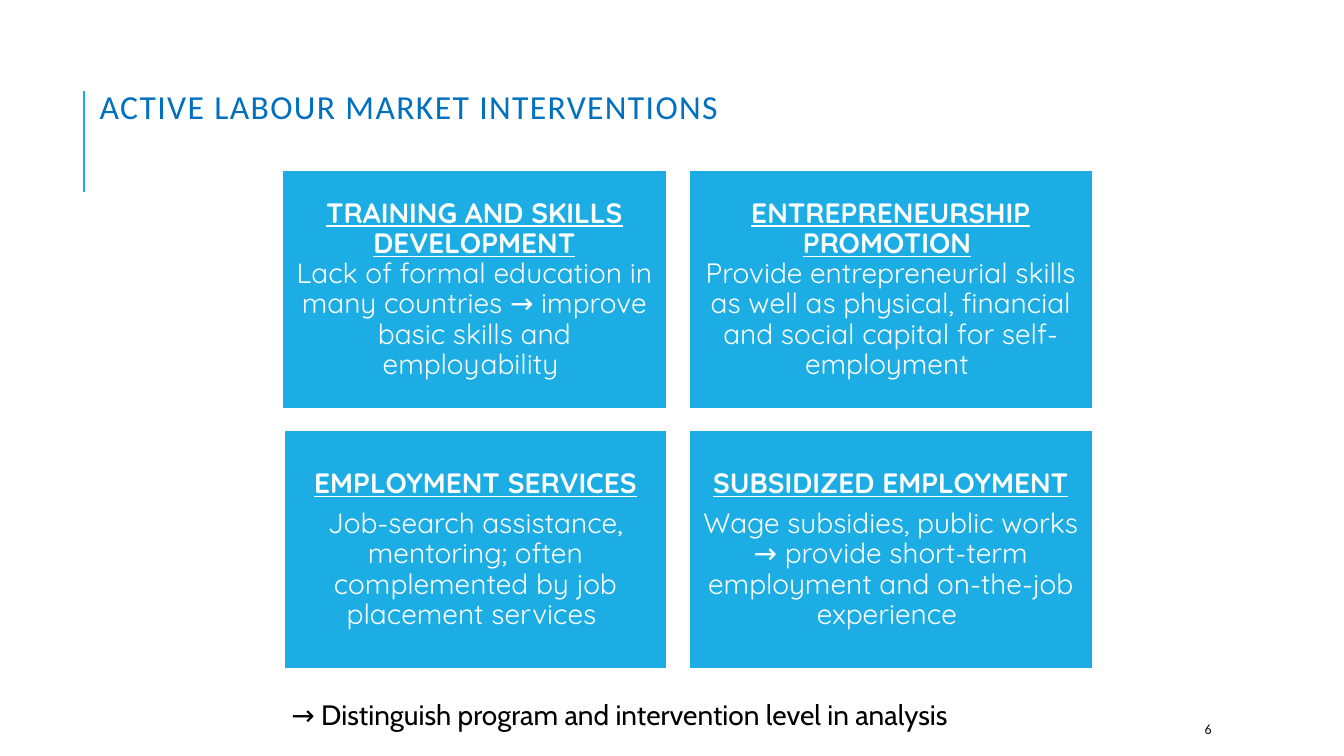
import pptx
import pptx.util
import pptx.dml.color
import pptx.enum.shapes
import pptx.enum.text
from lxml import etree

Pt = pptx.util.Pt
RGB = pptx.dml.color.RGBColor
Anchor = pptx.enum.text.MSO_ANCHOR
Align = pptx.enum.text.PP_ALIGN
SKY = RGB(0x1C, 0xAD, 0xE4)
BLUE = RGB(0x00, 0x70, 0xC0)
WHITE = RGB(0xFF, 0xFF, 0xFF)
BLACK = RGB(0x00, 0x00, 0x00)
DARK = RGB(0x0D, 0x0D, 0x0D)


def inch(*sizes):
    return [pptx.util.Inches(size) for size in sizes]


def add_run(para, text, face, size, color, strong=False):
    run = para.add_run()
    run.text = text
    run.font.name = face
    run.font.size = Pt(size)
    run.font.color.rgb = color
    run.font.bold = strong
    run.font.underline = strong
    return run


deck = pptx.Presentation()
deck.slide_width, deck.slide_height = inch(13.33, 7.5)
slide = deck.slides.add_slide(deck.slide_layouts[6])
shapes = slide.shapes

# Accent line beside the title
line = shapes.add_connector(
    pptx.enum.shapes.MSO_CONNECTOR.STRAIGHT, *inch(0.83, 1.9, 0.83, 0.9))
line.line.color.rgb = SKY
line.line.width = Pt(1.5)
etree.SubElement(line._element.spPr, pptx.oxml.ns.qn("a:effectLst"))

# Title, page number and closing remark
labels = [
    ((0.89, 0.27, 10.63, 1.64), "ACTIVE LABOUR MARKET INTERVENTIONS",
     "Calibri", 24, BLUE, Anchor.MIDDLE, 0.1, 0.8),
    ((11.85, 7.08, 1.06, 0.3), "6",
     "Calibri", 10, DARK, Anchor.MIDDLE, 0.1, 1.0),
    ((2.84, 6.8, 8, 0.6),
     "→ Distinguish program and intervention level in analysis",
     "Cabin", 20, BLACK, Anchor.TOP, 0.05, 1.2),
]
for place, text, face, size, color, anchor, inset, space in labels:
    box = shapes.add_textbox(*inch(*place))
    frame = box.text_frame
    frame.word_wrap = True
    frame.vertical_anchor = anchor
    frame.margin_left, frame.margin_right = inch(inset, inset)
    frame.margin_top, frame.margin_bottom = inch(0.05, 0.05)
    para = frame.paragraphs[0]
    para.line_spacing = space
    run = add_run(para, text, face, size, color)
    if color == BLUE:
        run.font._element.set("spc", "100")
    if face == "Cabin":
        para.space_before, para.space_after = Pt(12), Pt(2)
        box.fill.solid()
        box.fill.fore_color.rgb = WHITE

# Four intervention cards: two columns, two rows
GAP, TALL, TOP = 0.21, 2.37, 1.69
MID, END = 6.61, 10.84
cards = [
    [("TRAINING AND SKILLS DEVELOPMENT",
      "Lack of formal education in many countries → improve basic skills "
      "and employability "),
     ("ENTREPRENEURSHIP PROMOTION",
      "Provide entrepreneurial skills as well as physical, financial and "
      "social capital for self-employment ")],
    [("EMPLOYMENT SERVICES",
      "Job-search assistance, mentoring; often complemented by job "
      "placement services "),
     ("SUBSIDIZED EMPLOYMENT",
      "Wage subsidies, public works → provide short-term employment and "
      "on-the-job experience ")],
]
for row, pair in enumerate(cards):
    spans = [((2.8, 2.82)[row], MID), (MID + 0.22, END)]
    for (left, right), (head, body) in zip(spans, pair):
        card = shapes.add_shape(
            pptx.enum.shapes.MSO_SHAPE.RECTANGLE,
            *inch(left, TOP + row * (TALL + GAP), right - left, TALL))
        card.shadow.inherit = False
        card.fill.solid()
        card.fill.fore_color.rgb = SKY
        card.line.color.rgb = WHITE
        card.line.width = Pt(1.25)
        frame = card.text_frame
        frame.word_wrap = True
        frame.vertical_anchor = Anchor.MIDDLE
        frame.margin_left, frame.margin_right = inch(0.1, 0.1)
        frame.margin_top, frame.margin_bottom = inch(0.1, 0.1)
        para = frame.paragraphs[0]
        add_run(para, head, "Quicksand", 20, WHITE, True)
        # The top row breaks the line, the bottom row starts a paragraph
        if row == 0:
            if head.startswith("ENT"):
                add_run(para, " ", "Quicksand", 20, WHITE)
            para.add_line_break()
        else:
            para = frame.add_paragraph()
        add_run(para, body, "Quicksand", 20, WHITE)
        for para in frame.paragraphs:
            para.alignment = Align.CENTER
            para.line_spacing = 0.9
            para.space_after = Pt(7)

deck.save("out.pptx")
